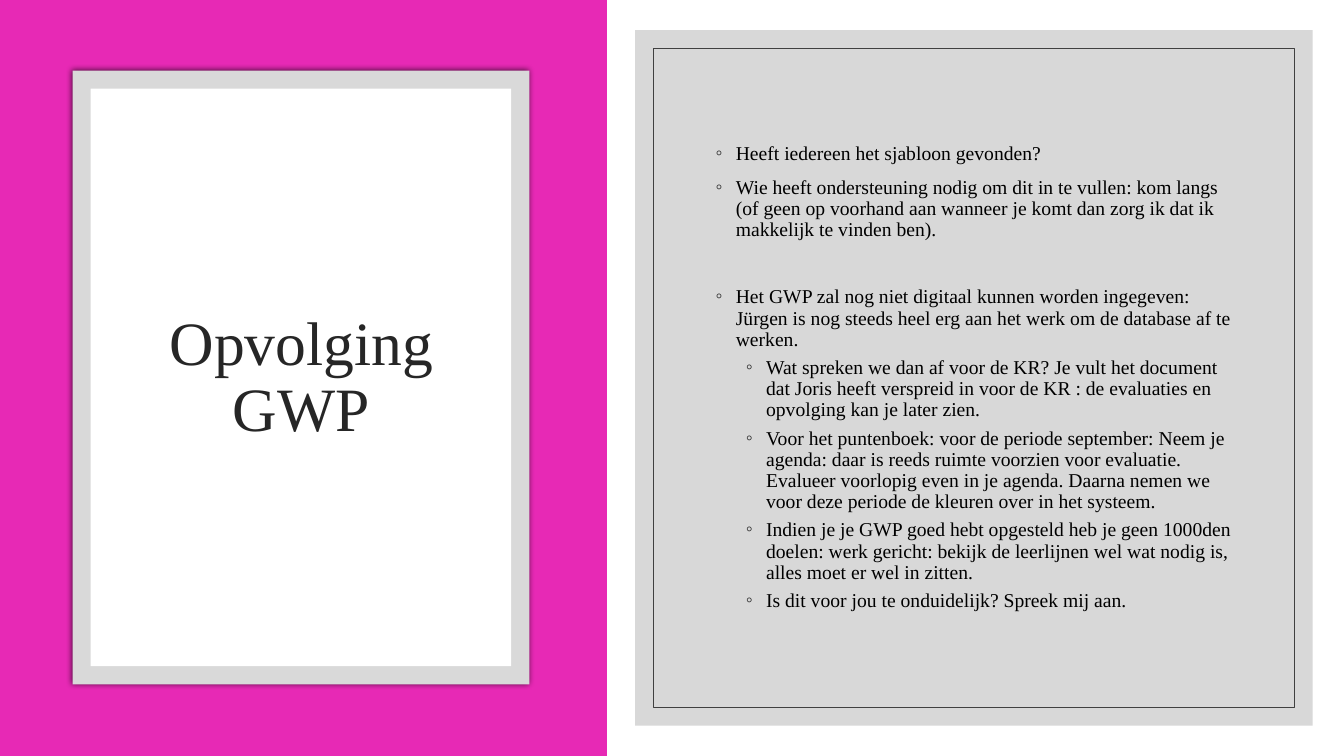
from lxml import etree
from pptx import Presentation
from pptx import util as u
from pptx.dml.color import RGBColor
from pptx.enum import shapes, text
from pptx.oxml.ns import qn

COLORS = {
    "pink": "E729B5", "frame": "D9D9D9", "white": "FFFFFF", "panel": "BFBFBF",
    "outline": "404040", "title": "262626", "body": "000000", "shadow": "000000",
}

# Each point: level, space before in points, wording
POINTS = [
    (0, 0, "Heeft iedereen het sjabloon gevonden?"),
    (0, 9, "Wie heeft ondersteuning nodig om dit in te vullen: kom langs (of geen op "
           "voorhand aan wanneer je komt dan zorg ik dat ik makkelijk te vinden ben)."),
    (0, 33, "Het GWP zal nog niet digitaal kunnen worden ingegeven: Jürgen is nog "
            "steeds heel erg aan het werk om de database af te werken."),
    (1, 5, "Wat spreken we dan af voor de KR? Je vult het document dat Joris heeft "
           "verspreid in voor de KR : de evaluaties en opvolging kan je later zien."),
    (1, 5, "Voor het puntenboek: voor de periode september: Neem je agenda: daar is "
           "reeds ruimte voorzien voor evaluatie. Evalueer voorlopig even in je agenda. "
           "Daarna nemen we voor deze periode de kleuren over in het systeem."),
    (1, 5, "Indien je je GWP goed hebt opgesteld heb je geen 1000den doelen: werk "
           "gericht: bekijk de leerlijnen wel wat nodig is, alles moet er wel in zitten."),
    (1, 5, "Is dit voor jou te onduidelijk? Spreek mij aan."),
]


class PageBuilder:
    font = "Times New Roman"
    line_spacing = 0.9

    def __init__(self, page):
        self.page = page

    def color(self, name):
        return RGBColor.from_string(COLORS[name])

    def rectangle(self, left, top, width, height, fill=None, line=None, alpha=None):
        box = self.page.shapes.add_shape(
            shapes.MSO_SHAPE.RECTANGLE, *map(u.Inches, (left, top, width, height)))
        box.shadow.inherit = False
        if fill:
            box.fill.solid()
            box.fill.fore_color.rgb = self.color(fill)
        else:
            box.fill.background()
        if line:
            box.line.color.rgb = self.color(line)
            box.line.width = u.Pt(0.5)
        else:
            box.line.fill.background()
        if alpha:
            fill_color = box._element.spPr.find(qn("a:solidFill"))[0]
            etree.SubElement(fill_color, qn("a:alpha"), val=str(alpha * 1000))
        return box

    def glow_shadow(self, box, blur, alpha):
        effects = box._element.spPr.find(qn("a:effectLst"))
        shadow = etree.SubElement(effects, qn("a:outerShdw"), blurRad=str(u.Pt(blur)),
                                  dist="0", dir="0", algn="ctr", rotWithShape="0")
        shade = etree.SubElement(shadow, qn("a:srgbClr"), val=COLORS["shadow"])
        etree.SubElement(shade, qn("a:alpha"), val=str(alpha * 1000))

    def text_box(self, left, top, width, height):
        box = self.page.shapes.add_textbox(*map(u.Inches, (left, top, width, height)))
        frame = box.text_frame
        frame.word_wrap = True
        frame.vertical_anchor = text.MSO_ANCHOR.MIDDLE
        return frame

    def format_text(self, para, size, color):
        para.line_spacing = self.line_spacing
        for span in para.runs:
            span.font.name = self.font
            span.font.size = u.Pt(size)
            span.font.color.rgb = self.color(color)

    def title(self, wording, *area):
        para = self.text_box(*area).paragraphs[0]
        para.text = wording
        para.alignment = text.PP_ALIGN.CENTER
        self.format_text(para, 44, "title")

    def bullet(self, para, level):
        properties = para._p.get_or_add_pPr()
        properties.set("marL", str(u.Inches(0.2 + 0.3 * level)))
        properties.set("indent", str(u.Inches(-0.2)))
        bullet_color = etree.SubElement(properties, qn("a:buClr"))
        etree.SubElement(bullet_color, qn("a:srgbClr"), val=COLORS["title"])
        etree.SubElement(properties, qn("a:buFont"), typeface=self.font)
        etree.SubElement(properties, qn("a:buChar"), char="◦")

    def bullet_list(self, points, *area):
        frame = self.text_box(*area)
        for index, (level, space, wording) in enumerate(points):
            para = frame.add_paragraph() if index else frame.paragraphs[0]
            para.text = wording
            para.level = level
            self.bullet(para, level)
            para.space_before = u.Pt(space)
            self.format_text(para, 14, "body")


def main():
    deck = Presentation()
    deck.slide_width, deck.slide_height = u.Inches(13.33), u.Inches(7.5)
    builder = PageBuilder(deck.slides.add_slide(deck.slide_layouts[6]))

    # Left side: framed title card
    builder.rectangle(0, 0, 6.02, 7.5, fill="pink")
    frame = builder.rectangle(0.72, 0.7, 4.53, 6.09, fill="frame")
    builder.glow_shadow(frame, blur=4, alpha=66)
    builder.rectangle(0.9, 0.88, 4.17, 5.73, fill="white")
    builder.title("Opvolging GWP", 1.08, 1.3, 3.82, 4.91)

    # Right side: panel with points
    builder.rectangle(6.3, 0.3, 6.72, 6.9, fill="panel", alpha=60)
    builder.rectangle(6.48, 0.48, 6.36, 6.54, line="outline")
    builder.bullet_list(POINTS, 7, 1.02, 5.33, 5.45)

    deck.save("out.pptx")


if __name__ == "__main__":
    main()
